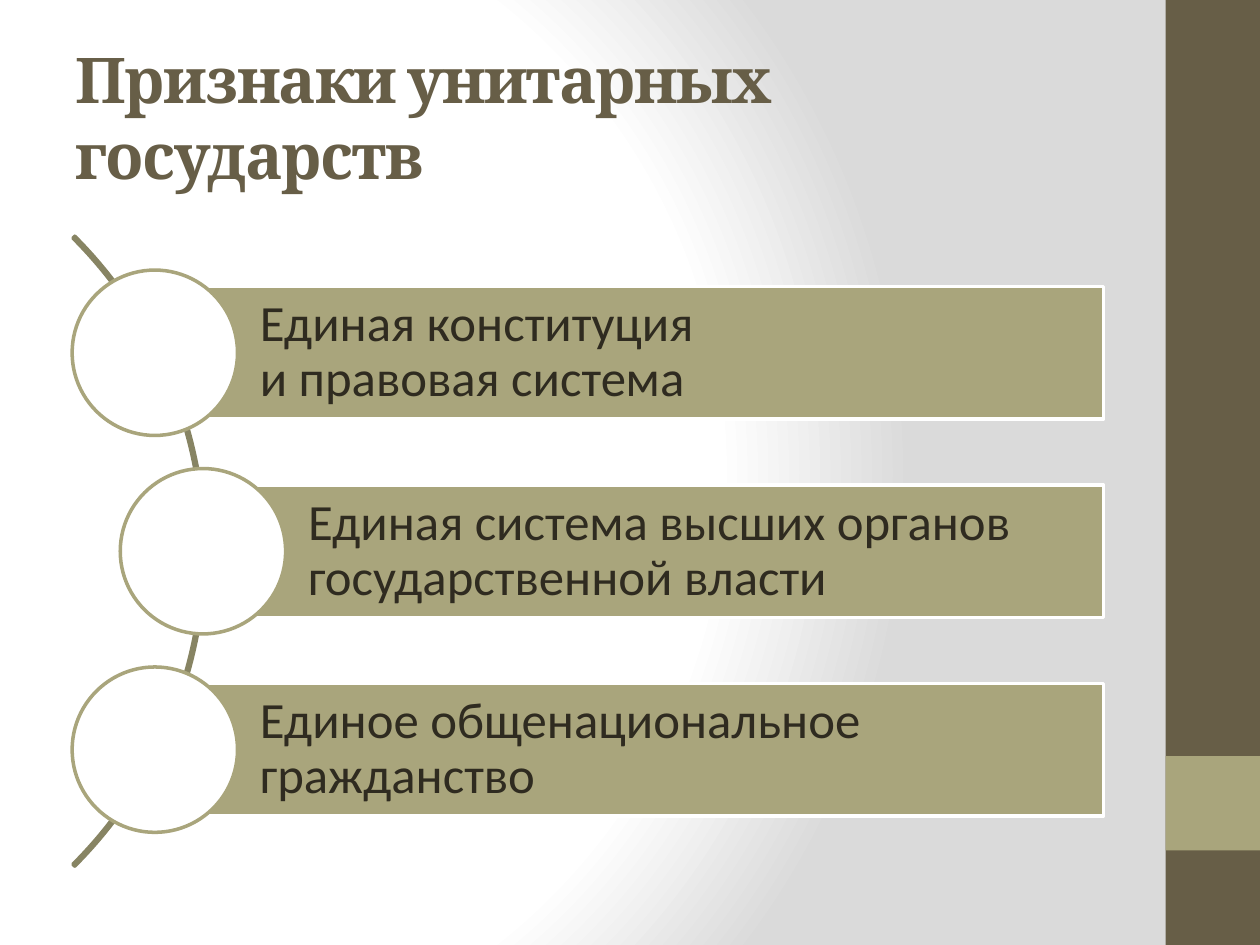
from pptx import Presentation
from pptx.dml.color import RGBColor
from pptx.enum.shapes import MSO_SHAPE
from pptx.enum.text import MSO_ANCHOR, MSO_AUTO_SIZE, PP_ALIGN
from pptx.oxml import parse_xml
from pptx.oxml.ns import nsdecls, qn
from pptx.util import Pt

RECT, OVAL, ARC = MSO_SHAPE.RECTANGLE, MSO_SHAPE.OVAL, MSO_SHAPE.BLOCK_ARC
MIDDLE, LEFT, NO_FIT = MSO_ANCHOR.MIDDLE, PP_ALIGN.LEFT, MSO_AUTO_SIZE.NONE

BROWN, KHAKI, OLIVE, DARK, WHITE = "675E47", "A9A57C", "878463", "2F2B20", "FFFFFF"
STOPS = [(0, WHITE), (75, WHITE), (100, "DADADA")]

MID, STEP = 315, 113.4
RIGHT, BAR, DISC = 630.7, 75.6, 94.5
ARC_LEFT, ARC_SIZE = -391.7, 509
ITEMS = [
    (88.5, ["Единая конституция ", "и правовая система"]),
    (116, ["Единая система высших органов государственной власти"]),
    (88.5, ["Единое общенациональное гражданство"]),
]


def color(code):
    return RGBColor.from_string(code)


def set_back(slide):
    """Fill the background with a circular gradient."""
    slide.background.fill.gradient()
    old = slide.element.find(".//" + qn("a:gradFill"))
    stops = "".join(
        f'<a:gs pos="{pos * 1000}"><a:srgbClr val="{code}"/></a:gs>'
        for pos, code in STOPS)
    new = parse_xml(
        f'<a:gradFill {nsdecls("a")} rotWithShape="1"><a:gsLst>{stops}</a:gsLst>'
        '<a:path path="circle"><a:fillToRect l="20000" t="50000" '
        'r="100000" b="50000"/></a:path></a:gradFill>')
    old.getparent().replace(old, new)


def add_shape(slide, kind, box, fill=None, line=None):
    shape = slide.shapes.add_shape(kind, *map(Pt, box))
    shape.shadow.inherit = False
    if fill:
        shape.fill.solid()
        shape.fill.fore_color.rgb = color(fill)
    else:
        shape.fill.background()
    if line:
        shape.line.color.rgb = color(line)
        shape.line.width = Pt(2)
    else:
        shape.line.fill.background()
    return shape


def add_run(para, text, font, size, code):
    run = para.add_run()
    run.text = text
    run.font.name = font
    run.font.size = Pt(size)
    run.font.color.rgb = color(code)
    return run


def set_title(slide, text):
    title = slide.shapes.title
    title.left, title.top, title.width, title.height = map(Pt, (36, 21.6, 600, 90))
    frame = title.text_frame
    frame.auto_size = NO_FIT
    frame.vertical_anchor = MIDDLE
    para = frame.paragraphs[0]
    para.alignment = LEFT
    run = add_run(para, text, "Cambria", 36, BROWN)
    run.font.bold = True
    run.font._element.set("spc", "-100")


def add_item(slide, left, mid, lines):
    """Add a bar with its text and the disc over its left end."""
    bar = add_shape(slide, RECT, (left, mid - BAR / 2, RIGHT - left, BAR), KHAKI, WHITE)
    frame = bar.text_frame
    frame.word_wrap = True
    frame.vertical_anchor = MIDDLE
    frame.margin_left = Pt(60)
    frame.margin_top = frame.margin_right = frame.margin_bottom = Pt(5.8)
    para = frame.paragraphs[0]
    para.alignment = LEFT
    para.line_spacing = 0.9
    for i, line in enumerate(lines):
        if i:
            para.add_line_break()
        add_run(para, line, "Calibri", 29, DARK)
    add_shape(slide, OVAL, (left - DISC / 2, mid - DISC / 2, DISC, DISC), WHITE, KHAKI)


def main():
    deck = Presentation()
    deck.slide_width, deck.slide_height = Pt(720), Pt(540)
    slide = deck.slides.add_slide(deck.slide_layouts[5])
    set_back(slide)
    add_shape(slide, RECT, (666, 0, 54, 540), BROWN)
    add_shape(slide, RECT, (666, 432, 54, 54), KHAKI)
    set_title(slide, "Признаки унитарных государств")

    arc = add_shape(slide, ARC, (ARC_LEFT, MID - ARC_SIZE / 2, ARC_SIZE, ARC_SIZE), line=OLIVE)
    # Start and end angles (315° and 45°), then the band's thickness
    for i, value in enumerate((189, 27, 0.003)):
        arc.adjustments[i] = value
    for i, (left, lines) in enumerate(ITEMS):
        add_item(slide, left, MID + (i - 1) * STEP, lines)
    deck.save("out.pptx")


if __name__ == "__main__":
    main()
